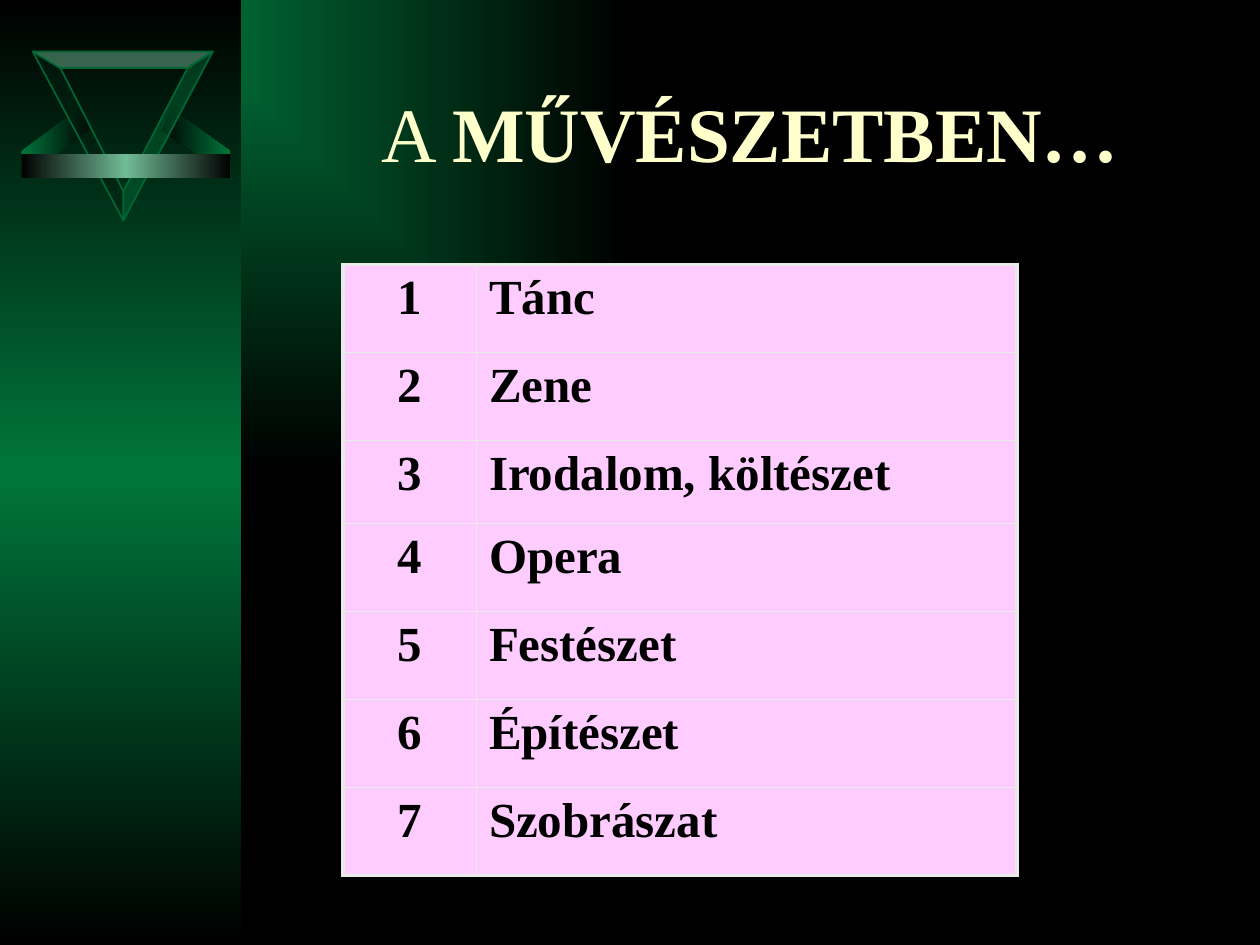
import pptx
import pptx.dml.color
import pptx.enum.shapes
import pptx.enum.text
import pptx.oxml
import pptx.oxml.ns
import pptx.util

Pt = pptx.util.Pt
RGBColor = pptx.dml.color.RGBColor
qn = pptx.oxml.ns.qn
RECTANGLE = pptx.enum.shapes.MSO_SHAPE.RECTANGLE
CENTER = pptx.enum.text.PP_ALIGN.CENTER
NAMESPACE = pptx.oxml.ns.nsdecls("a")

BLACK = RGBColor(0x00, 0x00, 0x00)
GREEN = RGBColor(0x00, 0x76, 0x3B)
EDGE_GREEN = RGBColor(0x00, 0x66, 0x33)
DARK_GREEN = RGBColor(0x00, 0x20, 0x10)
LIGHT_GREEN = RGBColor(0x71, 0xBB, 0x96)
CREAM = RGBColor(0xFF, 0xFF, 0xCC)
PINK = RGBColor(0xFF, 0xCC, 0xFF)
BORDER_GRAY = RGBColor(0xEA, 0xEA, 0xEA)

FONT = "Times New Roman"
ARTS = ["Tánc", "Zene", "Irodalom, költészet", "Opera", "Festészet", "Építészet", "Szobrászat"]
COLUMN_WIDTHS = [76.3, 308.9]
ROW_HEIGHTS = [50.3, 50.3, 47.5, 50.3, 50.3, 50.3, 50.3]

HORIZONTAL = '<a:lin ang="0" scaled="1"/>'
VERTICAL = '<a:lin ang="5400000" scaled="1"/>'
FROM_CORNER = '<a:path path="rect"><a:fillToRect r="100000" b="100000"/></a:path>'


def set_gradient(fill, element, colors, direction):
    fill.gradient()
    stops = "".join(
        f'<a:gs pos="{100000 * index // (len(colors) - 1)}"><a:srgbClr val="{color}"/></a:gs>'
        for index, color in enumerate(colors)
    )
    gradient = pptx.oxml.parse_xml(
        f'<a:gradFill {NAMESPACE} rotWithShape="1"><a:gsLst>{stops}</a:gsLst>{direction}</a:gradFill>'
    )
    previous = next(element.iter(qn("a:gradFill")))
    previous.getparent().replace(previous, gradient)


def add_gradient_bar(shapes, left, top, width, height, colors, direction):
    bar = shapes.add_shape(RECTANGLE, Pt(left), Pt(top), Pt(width), Pt(height))
    bar.shadow.inherit = False
    bar.line.fill.background()
    set_gradient(bar.fill, bar._element, colors, direction)


def add_polygon(shapes, left, top, points):
    corners = [(Pt(left + x), Pt(top + y)) for x, y in points]
    builder = shapes.build_freeform(*corners[0])
    builder.add_line_segments(corners[1:], close=True)
    polygon = builder.convert_to_shape()
    polygon.shadow.inherit = False
    return polygon


def add_emblem(slide, left, top, width):
    shapes = slide.shapes.add_group_shape().shapes
    left_wing = [(0, 56.9), (0, 72), (39.6, 44.6), (39.6, 46.1), (33.8, 32.4)]
    right_wing = [(width - x, y) for x, y in left_wing]
    for points, colors in [(right_wing, [BLACK, GREEN]), (left_wing, [GREEN, BLACK])]:
        wing = add_polygon(shapes, left, top, points)
        wing.line.fill.background()
        set_gradient(wing.fill, wing._element, colors, HORIZONTAL)

    outer_left, outer_right, outer_tip = (6.5, 0), (109.4, 0), (58.3, 96.5)
    inner_left, inner_right, inner_tip = (22.3, 9.4), (95, 9.4), (58.3, 79.9)
    sides = [
        ([outer_tip, inner_tip, inner_left, outer_left], DARK_GREEN),
        ([outer_left, inner_left, inner_right, outer_right], LIGHT_GREEN),
        ([outer_tip, inner_tip, inner_right, outer_right], EDGE_GREEN),
    ]
    for points, color in sides:
        side = add_polygon(shapes, left, top, points)
        side.fill.solid()
        side.fill.fore_color.rgb = color
        color_element = side._element.spPr.find(qn("a:solidFill"))[0]
        color_element.append(pptx.oxml.parse_xml(f'<a:alpha {NAMESPACE} val="50000"/>'))
        side.line.color.rgb = EDGE_GREEN
        side.line.width = Pt(1)

    add_gradient_bar(shapes, left, top + 58.3, width, 13.7, [BLACK, LIGHT_GREEN, BLACK], HORIZONTAL)


def add_title(slide, left, top, width, height):
    title = slide.shapes.add_textbox(Pt(left), Pt(top), Pt(width), Pt(height))
    text_frame = title.text_frame
    text_frame.word_wrap = True
    text_frame.vertical_anchor = pptx.enum.text.MSO_ANCHOR.MIDDLE
    paragraph = text_frame.paragraphs[0]
    paragraph.alignment = CENTER
    for text, bold in [("A ", False), ("MŰVÉSZETBEN…", True)]:
        run = paragraph.add_run()
        run.text = text
        run.font.name = FONT
        run.font.size = Pt(44)
        run.font.bold = bold
        run.font.color.rgb = CREAM


def set_borders(cell, widths):
    properties = cell._tc.get_or_add_tcPr()
    for side, width in widths.items():
        properties.append(pptx.oxml.parse_xml(
            f'<a:ln{side} {NAMESPACE} w="{Pt(width)}"><a:solidFill>'
            f'<a:srgbClr val="{BORDER_GRAY}"/></a:solidFill></a:ln{side}>'
        ))


def add_arts_table(slide, left, top):
    frame = slide.shapes.add_table(
        len(ARTS), 2, Pt(left), Pt(top), Pt(sum(COLUMN_WIDTHS)), Pt(sum(ROW_HEIGHTS))
    )
    table = frame.table
    table.first_row = False
    table.horz_banding = False
    for column, width in zip(table.columns, COLUMN_WIDTHS):
        column.width = Pt(width)
    last_row = len(ARTS) - 1
    for row_index, (art, height) in enumerate(zip(ARTS, ROW_HEIGHTS)):
        table.rows[row_index].height = Pt(height)
        for column_index, text in enumerate([str(row_index + 1), art]):
            cell = table.cell(row_index, column_index)
            outer_sides = {
                "L": column_index == 0,
                "R": column_index == 1,
                "T": row_index == 0,
                "B": row_index == last_row,
            }
            set_borders(cell, {side: 2.25 if outer else 1 for side, outer in outer_sides.items()})
            cell.fill.solid()
            cell.fill.fore_color.rgb = PINK
            cell.text_frame.text = text
            paragraph = cell.text_frame.paragraphs[0]
            if column_index == 0:
                paragraph.alignment = CENTER
            font = paragraph.runs[0].font
            font.name = FONT
            font.size = Pt(28)
            font.bold = True
            font.color.rgb = BLACK


def main():
    presentation = pptx.Presentation()
    presentation.slide_width = Pt(720)
    presentation.slide_height = Pt(540)
    slide = presentation.slides.add_slide(presentation.slide_layouts[6])
    set_gradient(slide.background.fill, slide._element, [GREEN, BLACK], FROM_CORNER)
    add_gradient_bar(slide.shapes, 0, 0, 138, 540, [BLACK, GREEN, BLACK], VERTICAL)
    add_emblem(slide, 12.2, 29.5, 119.5)
    add_title(slide, 150, 18, 558, 114)
    add_arts_table(slide, 196, 151)
    presentation.save("out.pptx")


if __name__ == "__main__":
    main()
